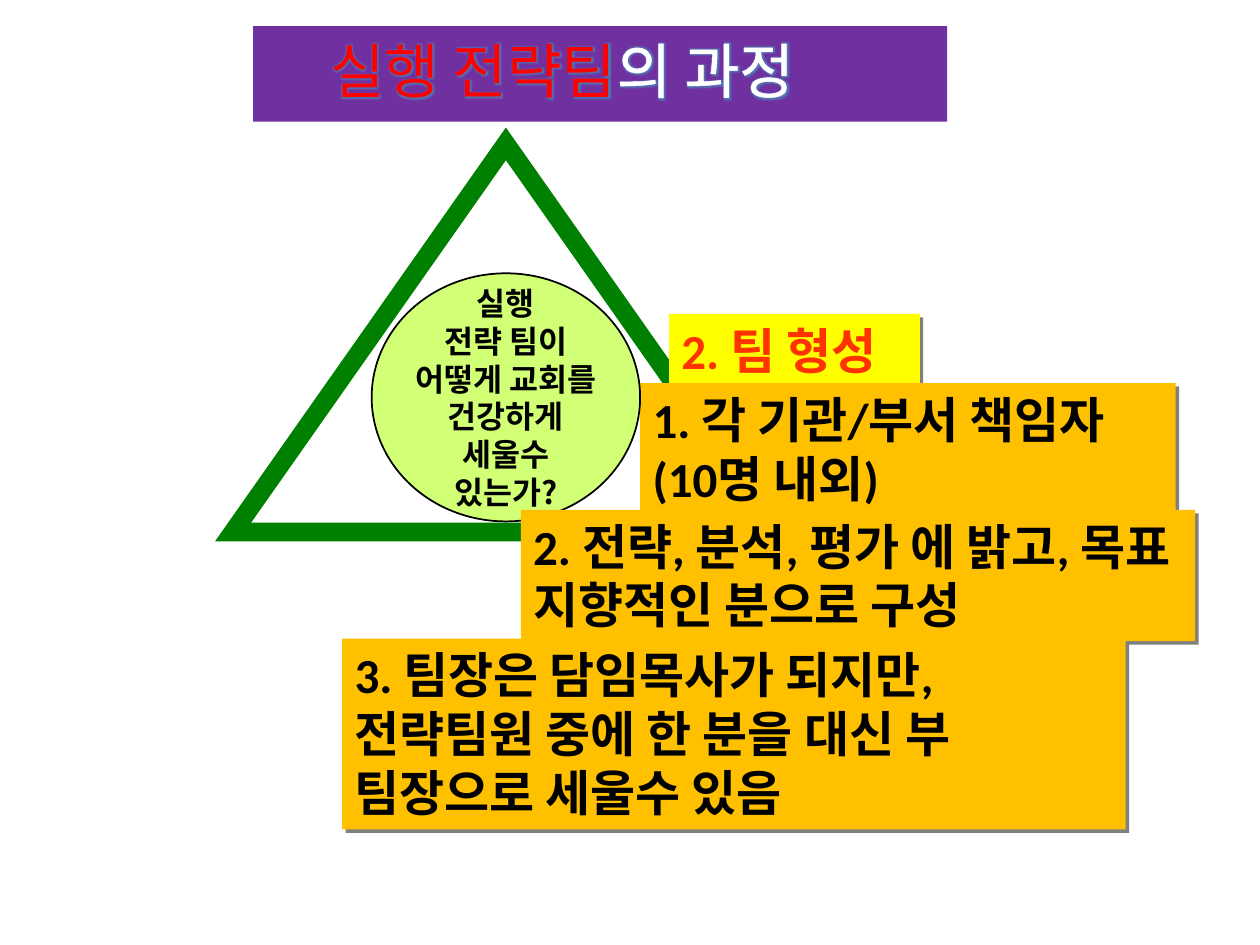
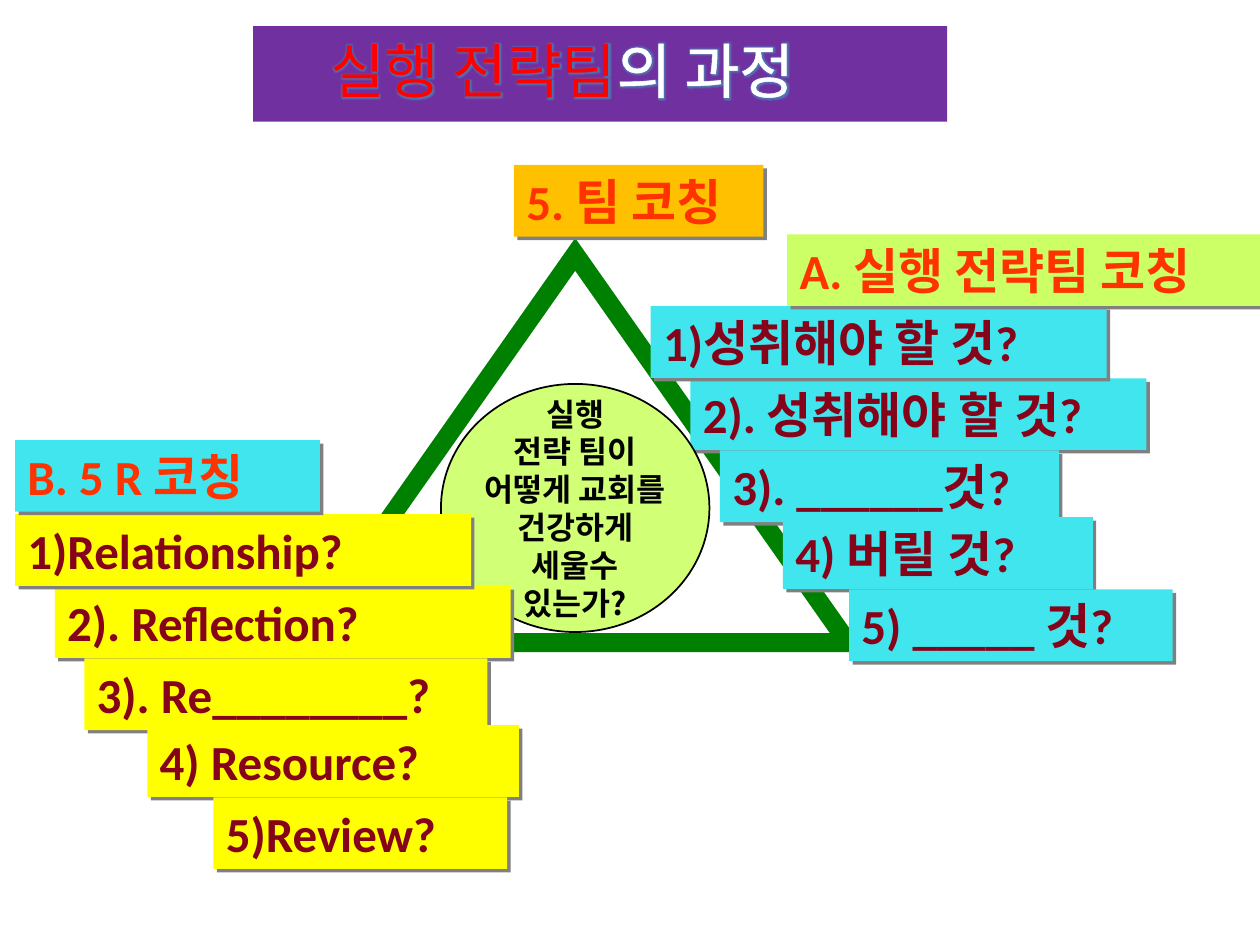
"""Build two slides on how a strategy team is formed and coached."""
from dataclasses import dataclass

import lxml.etree
import pptx
import pptx.dml.color
import pptx.enum.shapes
import pptx.enum.text
import pptx.oxml.ns
import pptx.util

Pt = pptx.util.Pt
Shapes = pptx.enum.shapes.MSO_SHAPE


@dataclass(frozen=True)
class Theme:
    """Colours, fonts and type sizes of the deck."""
    purple: str = "7030A0"
    white: str = "FFFFFF"
    red: str = "FF0000"
    glow: str = "4A86B8"
    green: str = "008000"
    lime: str = "CCFF66"
    yellow: str = "FFFF00"
    orange: str = "FFC000"
    cyan: str = "41E5ED"
    vermilion: str = "FF3300"
    maroon: str = "86041A"
    black: str = "000000"
    grey: str = "808080"
    latin: str = "Calibri"
    korean: str = "Noto Sans CJK KR"
    title_size: float = 34
    label_size: float = 28
    question_size: float = 18


@dataclass(frozen=True)
class Label:
    """A filled text strip, placed in points."""
    text: str
    left: float
    top: float
    width: float
    fill: str
    ink: str
    lines: int = 1


THEME = Theme()
QUESTION = ("실행", "전략 팀이", "어떻게 교회를", "건강하게", "세울수", "있는가?")
STEP_LEFTS = (0, 22.7, 39.6, 75.6, 113.4)
STEP_TOPS = (0, 41.2, 82.4, 120.6, 161.8)


def rgb(code: str) -> pptx.dml.color.RGBColor:
    """Turn a hex code into a colour."""
    return pptx.dml.color.RGBColor.from_string(code)


def add_element(parent, tag: str, **attributes: str):
    """Append a drawing element to a parent."""
    element = lxml.etree.SubElement(parent, pptx.oxml.ns.qn(tag))
    for name, value in attributes.items():
        element.set(name, value)
    return element


def add_colour(parent, code: str, alpha: int = 100):
    """Append a colour with an opacity in percent."""
    colour = add_element(parent, "a:srgbClr", val=code)
    if alpha < 100:
        add_element(colour, "a:alpha", val=str(alpha * 1000))


def add_block(page, kind, left: float, top: float, width: float, height: float, fill: str = ""):
    """Add a preset shape without line or shadow."""
    block = page.shapes.add_shape(kind, Pt(left), Pt(top), Pt(width), Pt(height))
    block.shadow.inherit = False
    block.line.fill.background()
    if fill:
        block.fill.solid()
        block.fill.fore_color.rgb = rgb(fill)
    else:
        block.fill.background()
    return block


def set_line(block, colour: str, width: float):
    """Outline a shape."""
    block.line.color.rgb = rgb(colour)
    block.line.width = Pt(width)


def set_font(font, properties, latin: str, size: float, colour: str, bold: bool):
    """Set the type of a paragraph or a span."""
    font.size = Pt(size)
    font.bold = bold
    font.color.rgb = rgb(colour)
    font.name = latin
    add_element(properties, "a:ea", typeface=THEME.korean)


def set_paragraph_font(para, latin: str, size: float, colour: str):
    """Set the bold type of a whole paragraph."""
    font = para.font
    properties = para._p.pPr.find(pptx.oxml.ns.qn("a:defRPr"))
    set_font(font, properties, latin, size, colour, True)


def add_title(page):
    """Draw the title band with its glowing two-colour text."""
    band = add_block(page, Shapes.RECTANGLE, 144.6, 14.9, 396.7, 54.6, THEME.purple)
    frame = band.text_frame
    frame.word_wrap = True
    frame.margin_left = Pt(44)
    frame.vertical_anchor = pptx.enum.text.MSO_ANCHOR.MIDDLE
    para = frame.paragraphs[0]
    para.alignment = pptx.enum.text.PP_ALIGN.LEFT
    para.line_spacing = 0.9
    for text, colour in (("실행 전략팀", THEME.red), ("의 과정", THEME.white)):
        span = para.add_run()
        span.text = text
        properties = span._r.get_or_add_rPr()
        set_font(span.font, properties, THEME.korean, THEME.title_size, colour, False)
        outline = add_element(properties, "a:ln", w=str(Pt(1.45)))
        add_colour(add_element(outline, "a:solidFill"), THEME.white)
        properties.insert(0, outline)
        effects = add_element(properties, "a:effectLst")
        add_colour(add_element(effects, "a:glow", rad=str(Pt(3.5))), THEME.glow, 80)
        properties.insert(2, effects)


def add_label(page, label: Label):
    """Draw a text strip with a hard shadow."""
    height = 7 + 34 * label.lines
    box = add_block(page, Shapes.RECTANGLE, label.left, label.top, label.width, height, label.fill)
    effects = box._element.spPr.find(pptx.oxml.ns.qn("a:effectLst"))
    shadow = add_element(effects, "a:outerShdw", dist=str(Pt(2.8)), dir="2700000",
                         algn="ctr", rotWithShape="0")
    add_colour(shadow, THEME.grey)
    frame = box.text_frame
    frame.word_wrap = True
    frame.vertical_anchor = pptx.enum.text.MSO_ANCHOR.TOP
    para = frame.paragraphs[0]
    para.text = label.text
    para.alignment = pptx.enum.text.PP_ALIGN.LEFT
    set_paragraph_font(para, THEME.latin, THEME.label_size, label.ink)


def add_triangle(page, left: float, top: float):
    """Draw the open green triangle."""
    triangle = add_block(page, Shapes.FLOWCHART_EXTRACT, left, top, 311.8, 221.8)
    set_line(triangle, THEME.green, 10.75)
    add_element(triangle.line._get_or_add_ln(), "a:miter", lim="800000")


def add_question(page, left: float, top: float):
    """Draw the ellipse holding the central question."""
    ellipse = add_block(page, Shapes.OVAL, left, top, 153.4, 141.8, THEME.lime)
    colour = ellipse._element.spPr.find(".//" + pptx.oxml.ns.qn("a:srgbClr"))
    add_element(colour, "a:alpha", val="89000")
    set_line(ellipse, THEME.black, 1)
    frame = ellipse.text_frame
    frame.word_wrap = False
    frame.vertical_anchor = pptx.enum.text.MSO_ANCHOR.MIDDLE
    for index, text in enumerate(QUESTION):
        para = frame.add_paragraph() if index else frame.paragraphs[0]
        para.text = text
        para.alignment = pptx.enum.text.PP_ALIGN.CENTER
        set_paragraph_font(para, THEME.korean, THEME.question_size, THEME.black)


def staircase(left: float, top: float, fill: str, steps: tuple) -> list[Label]:
    """Place five strips stepping down to the right."""
    return [Label(text, left + shift, top + drop, width, fill, THEME.maroon)
            for (text, width), shift, drop in zip(steps, STEP_LEFTS, STEP_TOPS)]


def add_process_page(deck, left: float, top: float, behind: list[Label], front: list[Label]):
    """Add a page with the triangle, its question, the labels and the title."""
    page = deck.slides.add_slide(deck.slide_layouts[6])
    add_triangle(page, left, top)
    for label in behind:
        add_label(page, label)
    add_question(page, left + 79.2, top + 74)
    for label in front:
        add_label(page, label)
    add_title(page)


def add_forming_page(deck):
    """Add the page on forming the team."""
    behind = [
        Label("2. 팀 형성", 382.3, 179.4, 143.3, THEME.yellow, THEME.vermilion),
        Label("1. 각 기관/부서 책임자 (10명 내외)", 365.8, 218.9, 306,
              THEME.orange, THEME.black, 2),
    ]
    front = [
        Label("2. 전략, 분석, 평가 에 밝고, 목표 지향적인 분으로 구성", 297.6, 291.4, 385.4,
              THEME.orange, THEME.black, 2),
        Label("3. 팀장은 담임목사가 되지만, 전략팀원 중에 한 분을 대신 부 팀장으로 세울수 있음",
              195.5, 365, 447.8, THEME.orange, THEME.black, 3),
    ]
    add_process_page(deck, 133.2, 82.2, behind, front)


def add_coaching_page(deck):
    """Add the page on coaching the team."""
    heading = Label("5. 팀 코칭", 293.7, 94.3, 142.6, THEME.orange, THEME.vermilion)
    team_heading = Label("A. 실행 전략팀 코칭", 449.8, 133.9, 271.4, THEME.lime, THEME.vermilion)
    five_r_heading = Label("B. 5 R 코칭", 8.6, 251.5, 174.2, THEME.cyan, THEME.vermilion)
    team = staircase(371.8, 175, THEME.cyan, (
        ("1)성취해야 할 것?", 260.6), ("2). 성취해야 할 것?", 260.6),
        ("3). ______것?", 193.7), ("4) 버릴 것?", 177.1), ("5) _____ 것?", 185)))
    five_r = staircase(8.6, 293.8, THEME.yellow, (
        ("1)Relationship?", 260.6), ("2). Reflection?", 260.6),
        ("3). Re________?", 230.4), ("4) Resource?", 212.4), ("5)Review?", 167.8)))
    front = team[3:] + team[:1] + five_r[1:] + five_r[:1] + [five_r_heading, team_heading]
    add_process_page(deck, 172.8, 145.4, [heading] + team[1:3], front)


def main():
    """Build and save the deck."""
    deck = pptx.Presentation()
    deck.slide_width, deck.slide_height = Pt(720), Pt(540)
    add_forming_page(deck)
    add_coaching_page(deck)
    deck.save("out.pptx")


if __name__ == "__main__":
    main()
